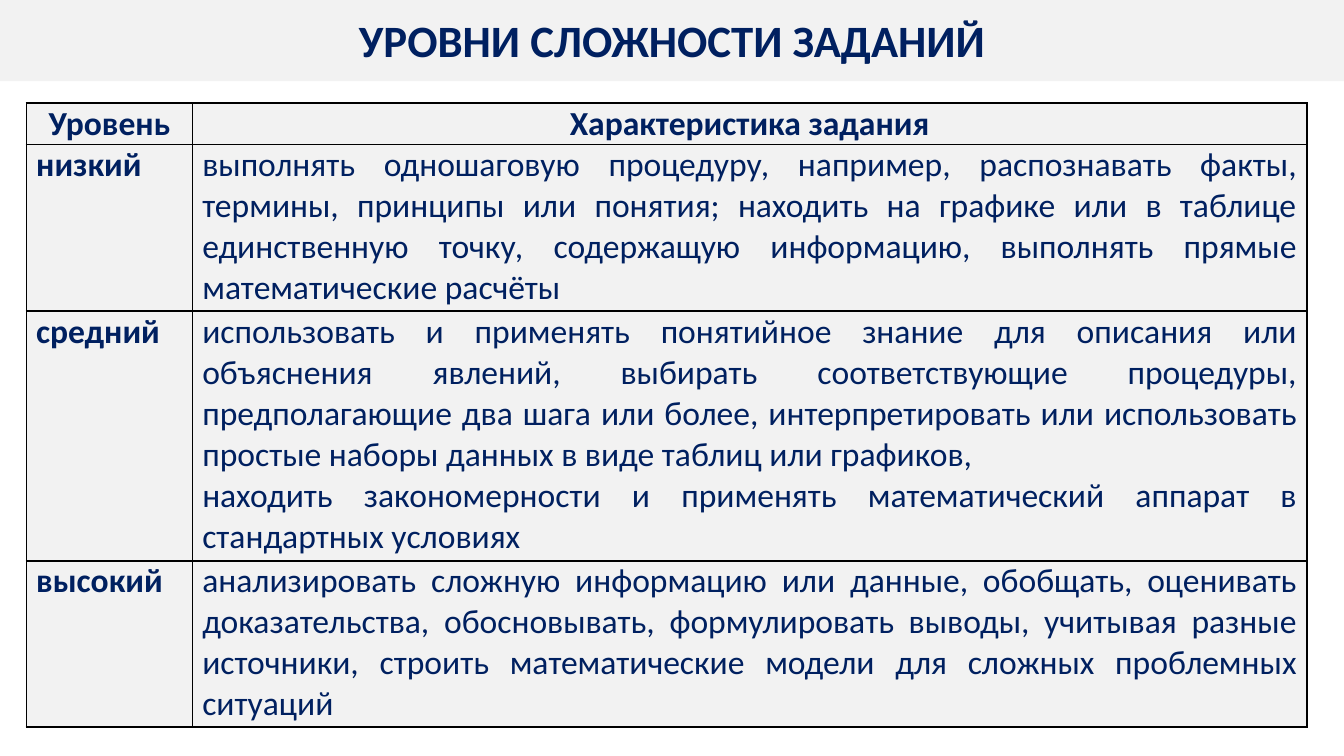
from pptx import Presentation
from pptx.dml.color import RGBColor
from pptx.enum.shapes import MSO_SHAPE
from pptx.enum.text import MSO_ANCHOR, PP_ALIGN
from pptx.oxml import parse_xml
from pptx.oxml.ns import nsdecls
from pptx.util import Pt

RECT = MSO_SHAPE.RECTANGLE
MIDDLE, TOP = MSO_ANCHOR.MIDDLE, MSO_ANCHOR.TOP
CENTER, JUSTIFY = PP_ALIGN.CENTER, PP_ALIGN.JUSTIFY
NAVY, GRAY, BLACK = "002060", "F2F2F2", "000000"
LINE_H = 22.3

ROWS = [
    ("Уровень", "Характеристика задания", 1),
    ("низкий",
     "выполнять одношаговую процедуру, например, распознавать факты, термины, "
     "принципы или понятия; находить на графике или в таблице единственную точку, "
     "содержащую информацию, выполнять прямые математические расчёты", 4),
    ("средний",
     "использовать и применять понятийное знание для описания или объяснения "
     "явлений, выбирать соответствующие процедуры, предполагающие два шага или "
     "более, интерпретировать или использовать простые наборы данных в виде таблиц "
     "или графиков,\n"
     "находить закономерности и применять математический аппарат в стандартных "
     "условиях", 6),
    ("высокий",
     "анализировать сложную информацию или данные, обобщать, оценивать "
     "доказательства, обосновывать, формулировать выводы, учитывая разные "
     "источники, строить математические модели для сложных проблемных ситуаций", 4),
]


def rgb(value):
    return RGBColor.from_string(value)


def write(tf, text, size, bold, align):
    tf.text = text
    for p in tf.paragraphs:
        p.alignment = align
        for r in p.runs:
            r.font.name = "Calibri"
            r.font.size = Pt(size)
            r.font.bold = bold
            r.font.color.rgb = rgb(NAVY)


prs = Presentation()
prs.slide_width, prs.slide_height = Pt(720), Pt(405)
s = prs.slides.add_slide(prs.slide_layouts[5])

title = s.shapes.title
title.left, title.top, title.width, title.height = Pt(0), Pt(3), Pt(720), Pt(36)
title.text_frame.vertical_anchor = MIDDLE
write(title.text_frame, "УРОВНИ СЛОЖНОСТИ ЗАДАНИЙ", 24, True, CENTER)

band = s.shapes.add_shape(RECT, Pt(0), Pt(-1.5), Pt(720), Pt(45))
band.shadow.inherit = False
band.fill.solid()
band.fill.fore_color.rgb = rgb(GRAY)
band.line.fill.background()
title.element.addprevious(band.element)

table_h = LINE_H * sum(lines for _, _, lines in ROWS)
table = s.shapes.add_table(len(ROWS), 2, Pt(14.2), Pt(55.2), Pt(686), Pt(table_h)).table
table.columns[0].width, table.columns[1].width = Pt(89), Pt(597)

for i, (level, description, lines) in enumerate(ROWS):
    table.rows[i].height = Pt(LINE_H * lines)
    for j, text in enumerate((level, description)):
        cell = table.cell(i, j)
        cell.margin_left = cell.margin_right = Pt(5.2)
        cell.margin_top = cell.margin_bottom = Pt(0)
        cell.vertical_anchor = TOP
        write(cell.text_frame, text, 18, i == 0 or j == 0, JUSTIFY if i else CENTER)
        tcPr = cell._tc.get_or_add_tcPr()
        for side in ("lnL", "lnR", "lnT", "lnB"):
            tcPr.append(parse_xml(
                f'<a:{side} {nsdecls("a")} w="{Pt(1)}"><a:solidFill>'
                f'<a:srgbClr val="{BLACK}"/></a:solidFill></a:{side}>'))
        cell.fill.solid()
        cell.fill.fore_color.rgb = rgb(GRAY)

prs.save("out.pptx")
